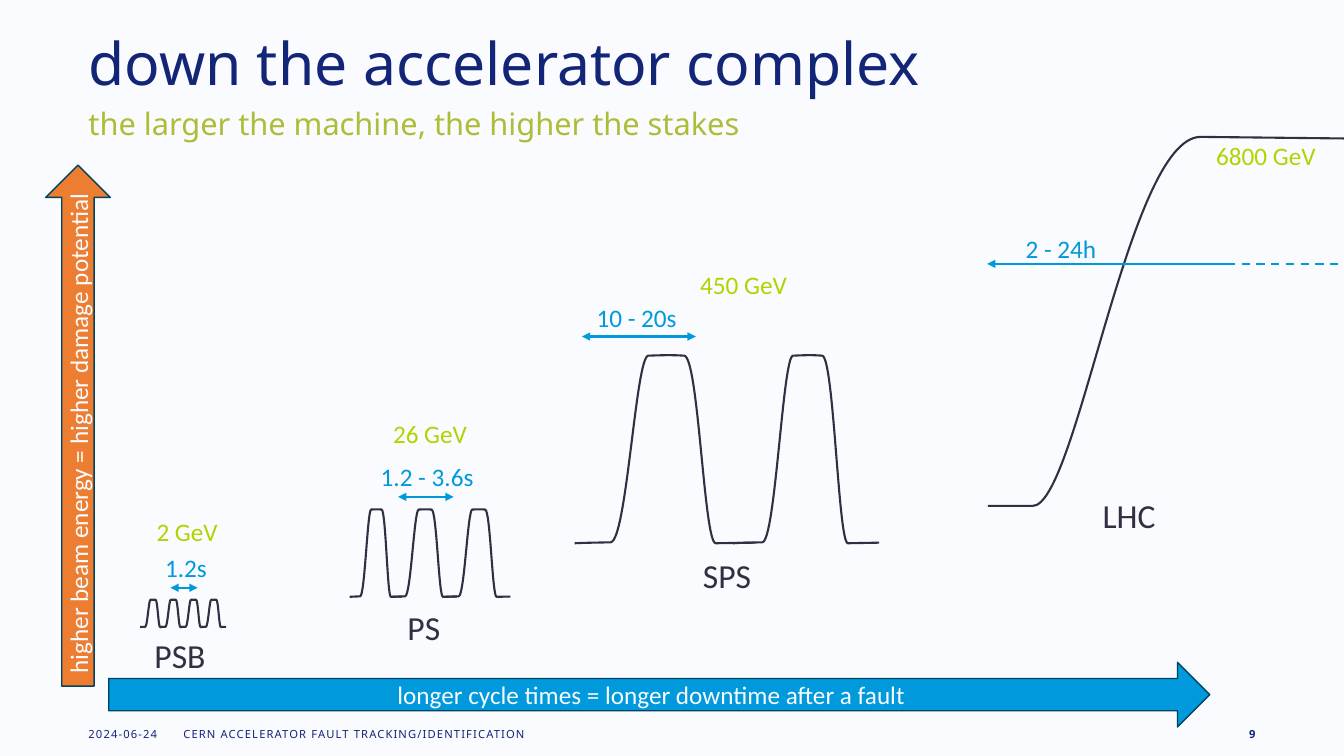
"""Build the slide on cycle times and beam energies down the accelerator complex."""
from lxml.etree import SubElement
from pptx import Presentation
from pptx.dml.color import RGBColor
from pptx.enum.dml import MSO_LINE
from pptx.enum.shapes import MSO_CONNECTOR, MSO_SHAPE
from pptx.enum.text import MSO_ANCHOR, PP_ALIGN
from pptx.oxml.ns import qn
from pptx.util import Cm, Pt

COLORS = {
    "paper": "F9FBFE", "navy": "132577", "olive": "ADBD38", "blue": "0099DC",
    "orange": "ED7D31", "edge": "004360", "ink": "332F43", "lime": "ADD600",
}
RGB = {name: RGBColor.from_string(value) for name, value in COLORS.items()}
FONTS = {
    "title": {"name": "Noto Sans", "size": Pt(42)},
    "subtitle": {"name": "Noto Sans", "size": Pt(22)},
    "footer": {"name": "Noto Sans", "size": Pt(8)},
    "page": {"name": "Noto Sans", "size": Pt(8), "bold": True},
    "machine": {"name": "Calibri", "size": Pt(24)},
    "label": {"name": "Calibri", "size": Pt(18)},
}


def write(shape, text, style, color, align=PP_ALIGN.CENTER, anchor=MSO_ANCHOR.MIDDLE):
    frame = shape.text_frame
    frame.word_wrap = True
    frame.vertical_anchor = anchor
    paragraph = frame.paragraphs[0]
    paragraph.alignment = align
    run = paragraph.add_run()
    run.text = text
    for attribute, value in FONTS[style].items():
        setattr(run.font, attribute, value)
    run.font.color.rgb = RGB[color]
    if style == "footer":
        run.font._element.set("spc", "80")
    return frame


def draw_cycle(points):
    start, *rest = [(Cm(x), Cm(y)) for x, y in points]
    builder = slide.shapes.build_freeform(*start)
    builder.add_line_segments(rest, close=False)
    cycle = builder.convert_to_shape()
    cycle.shadow.inherit = False
    cycle.fill.background()
    cycle.line.color.rgb = RGB["ink"]
    cycle.line.width = Pt(1.5)
    outline = cycle._element.find(".//" + qn("a:path"))
    segments = outline.findall(qn("a:lnTo"))
    for first in range(0, len(segments) - 1, 3):
        curve = SubElement(outline, qn("a:cubicBezTo"))
        for segment in segments[first:first + 3]:
            curve.append(segment[0])
            outline.remove(segment)
    outline.append(segments[-1])


deck = Presentation()
deck.slide_width, deck.slide_height = Cm(33.86), Cm(19.05)
slide = deck.slides.add_slide(deck.slide_layouts[6])
slide.background.fill.solid()
slide.background.fill.fore_color.rgb = RGB["paper"]

headings = [
    ("down the accelerator complex", "title", "navy", 0.74, 1.83, 0.13, 0.05),
    ("the larger the machine, the higher the stakes", "subtitle", "olive", 2.59, 1.4, 0.05, 0.13),
]
for text, style, color, top, height, inset_top, inset_bottom in headings:
    heading = slide.shapes.add_textbox(Cm(1.98), Cm(top), Cm(22.73), Cm(height))
    frame = write(heading, text, style, color, PP_ALIGN.LEFT, MSO_ANCHOR.TOP)
    frame.margin_top, frame.margin_bottom = Cm(inset_top), Cm(inset_bottom)
    if style == "title":
        frame.paragraphs[0].line_spacing = 0.9

trends = [
    ("longer cycle times = longer downtime after a fault", "blue", 2.74, 16.69, 27.74, 0),
    ("higher beam energy = higher damage potential", "orange", -4.6, 9.91, 13.13, 270),
]
for text, color, left, top, length, rotation in trends:
    trend = slide.shapes.add_shape(
        MSO_SHAPE.RIGHT_ARROW, Cm(left), Cm(top), Cm(length), Cm(1.63))
    trend.rotation = rotation
    trend.shadow.inherit = False
    trend.fill.solid()
    trend.fill.fore_color.rgb = RGB[color]
    trend.line.color.rgb = RGB["edge"]
    trend.line.width = Pt(1)
    write(trend, text, "label", "paper")

pulse_profile = [
    (0, 1), (0.07, 0.997), (0.12, 0.997), (0.2, 0.995),
    (0.29, 0.99), (0.34, 0.01), (0.41, 0.005),
    (0.48, 0.003), (0.53, 0), (0.61, 0.005),
    (0.69, 0.01), (0.72, 0.99), (0.785, 1), (1, 0.997),
]
pulses = [(3.53 + 0.51 * turn, 0.64, 15.11, 0.69) for turn in range(4)]
pulses += [(left, width, 12.83, 2.21) for left, width in [(8.81, 1.32), (9.88, 1.63), (11.23, 1.63)]]
pulses += [(left, width, 8.94, 4.75) for left, width in [(14.48, 4.52), (18.47, 3.68)]]
for left, width, top, height in pulses:
    draw_cycle([(left + width * x, top + height * y) for x, y in pulse_profile])

injection, ramp_start = (24.89, 12.75), (26.01, 12.75)
draw_cycle([injection, injection, ramp_start, ramp_start,
            (27.13, 12.78), (28.42, 3.45), (30.25, 3.45), (33.86, 3.49)])

machine_labels = [
    ("PSB", "machine", "ink", 2.92, 15.93, 3.23, 1.14),
    ("1.2s", "label", "blue", 3.07, 13.74, 3.23, 1.14),
    ("2 GeV", "label", "lime", 3.1, 12.83, 3.23, 1.14),
    ("PS", "machine", "ink", 8.51, 15.24, 4.34, 1.14),
    ("1.2 - 3.6s", "label", "blue", 9.25, 11.43, 3.02, 1.14),
    ("26 GeV", "label", "lime", 9.22, 9.37, 3.23, 3.1),
    ("SPS", "machine", "ink", 14.48, 13.92, 7.67, 1.14),
    ("10 - 20s", "label", "blue", 14.2, 7.42, 3.68, 1.14),
    ("450 GeV", "label", "lime", 17.12, 5.92, 3.23, 2.51),
    ("LHC", "machine", "ink", 24.61, 12.42, 7.67, 1.14),
    ("2 - 24h", "label", "blue", 24.89, 5.74, 3.68, 1.04),
    ("6800 GeV", "label", "lime", 30.28, 2.67, 3.23, 2.51),
]
for text, style, color, *box in machine_labels:
    write(slide.shapes.add_textbox(*map(Cm, box)), text, style, color)

durations = [
    (4.29, 4.98, 14.81, ["headEnd", "tailEnd"], None),
    (10.03, 11.43, 12.52, ["headEnd", "tailEnd"], None),
    (14.66, 17.53, 8.48, ["headEnd", "tailEnd"], None),
    (24.87, 30.91, 6.65, ["headEnd"], None),
    (30.91, 33.86, 6.65, [], MSO_LINE.DASH),
]
for start, end, level, arrowheads, dash in durations:
    duration = slide.shapes.add_connector(
        MSO_CONNECTOR.STRAIGHT, Cm(start), Cm(level), Cm(end), Cm(level))
    duration.line.color.rgb = RGB["blue"]
    duration.line.width = Pt(1.5)
    duration.line.dash_style = dash
    for arrowhead in arrowheads:
        SubElement(duration.line._get_or_add_ln(), qn("a:" + arrowhead), type="triangle")
    SubElement(duration._element.spPr, qn("a:effectLst"))

footers = [
    ("2024-06-24", "footer", 1.98, 2.31, PP_ALIGN.LEFT),
    ("CERN ACCELERATOR FAULT TRACKING/IDENTIFICATION", "footer", 4.37, 11.99, PP_ALIGN.LEFT),
    ("9", "page", 24.26, 7.62, PP_ALIGN.RIGHT),
]
for text, style, left, width, align in footers:
    footer = slide.shapes.add_textbox(Cm(left), Cm(17.98), Cm(width), Cm(1.02))
    write(footer, text, style, "navy", align)

deck.save("out.pptx")
